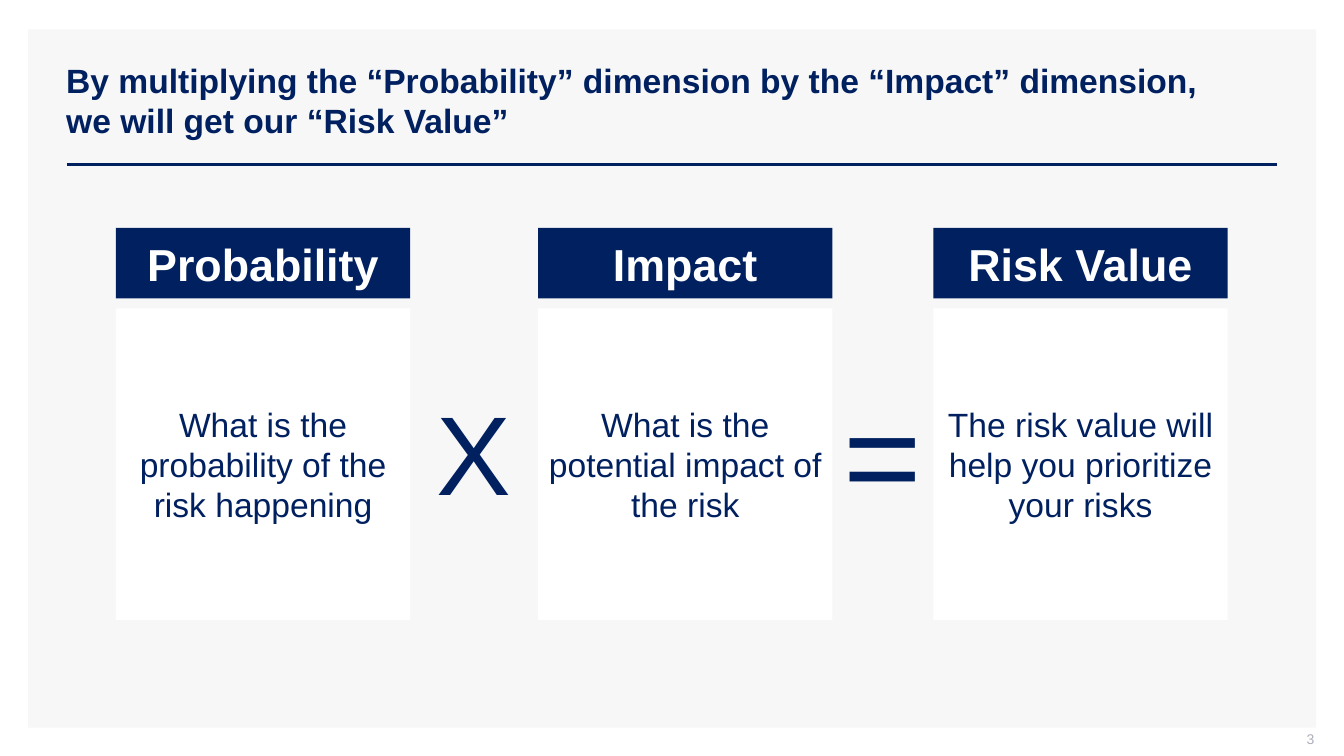
from dataclasses import dataclass

import pptx
import pptx.dml.color
import pptx.enum.shapes
import pptx.enum.text
import pptx.oxml.ns
import pptx.util
from lxml import etree
from pptx.shapes.autoshape import Shape
from pptx.shapes.connector import Connector
from pptx.slide import Slide

Cm = pptx.util.Cm
Align = pptx.enum.text.PP_ALIGN
Anchor = pptx.enum.text.MSO_ANCHOR

NAVY = "002060"
WHITE = "FFFFFF"
PANEL_GREY = "F7F7F7"
NUMBER_GREY = "ADAFBB"

FACTOR_WIDTH = 7.42
HEADER_TOP, HEADER_HEIGHT = 5.74, 1.78
BODY_TOP, BODY_HEIGHT = 7.77, 7.85
OPERATOR_WIDTH, OPERATOR_MIDDLE = 6.83, 11.38


@dataclass(frozen=True)
class Box:
    left: float
    top: float
    width: float
    height: float

    def lengths(self) -> tuple[pptx.util.Length, ...]:
        return Cm(self.left), Cm(self.top), Cm(self.width), Cm(self.height)


@dataclass(frozen=True)
class TextStyle:
    size: int
    color: str = NAVY
    bold: bool = False
    align: Align = Align.CENTER
    anchor: Anchor = Anchor.MIDDLE


@dataclass(frozen=True)
class Factor:
    left: float
    heading: str
    explanation: str


@dataclass(frozen=True)
class Operator:
    symbol: str
    size: int
    height: float


FACTORS = [
    Factor(2.92, "Probability", "What is the probability of the risk happening"),
    Factor(13.56, "Impact", "What is the potential impact of the risk"),
    Factor(23.52, "Risk Value", "The risk value will help you prioritize your risks"),
]
OPERATORS = [Operator("X", 80, 3.68), Operator("=", 96, 4.37)]

TITLE_STYLE = TextStyle(24, bold=True, align=Align.LEFT)
HEADING_STYLE = TextStyle(32, WHITE, bold=True)
EXPLANATION_STYLE = TextStyle(24)
NUMBER_STYLE = TextStyle(10, NUMBER_GREY, align=Align.RIGHT)


def rgb(value: str) -> pptx.dml.color.RGBColor:
    return pptx.dml.color.RGBColor.from_string(value)


def write(shape: Shape, text: str, style: TextStyle) -> None:
    frame = shape.text_frame
    frame.text = text
    frame.word_wrap = True
    frame.vertical_anchor = style.anchor
    for paragraph in frame.paragraphs:
        paragraph.alignment = style.align
        for run in paragraph.runs:
            run.font.name = "Arial"
            run.font.size = pptx.util.Pt(style.size)
            run.font.bold = style.bold
            run.font.color.rgb = rgb(style.color)


def add_rectangle(slide: Slide, box: Box, fill: str) -> Shape:
    rectangle = slide.shapes.add_shape(
        pptx.enum.shapes.MSO_SHAPE.RECTANGLE, *box.lengths()
    )
    rectangle.shadow.inherit = False
    rectangle.fill.solid()
    rectangle.fill.fore_color.rgb = rgb(fill)
    rectangle.line.fill.background()
    return rectangle


def add_text(slide: Slide, box: Box, text: str, style: TextStyle) -> Shape:
    textbox = slide.shapes.add_textbox(*box.lengths())
    write(textbox, text, style)
    return textbox


def add_rule(slide: Slide, left: float, right: float, y: float) -> Connector:
    rule = slide.shapes.add_connector(
        pptx.enum.shapes.MSO_CONNECTOR.STRAIGHT, Cm(left), Cm(y), Cm(right), Cm(y)
    )
    rule.line.color.rgb = rgb(NAVY)
    rule.line.width = pptx.util.Pt(2)
    properties = rule._element.find(pptx.oxml.ns.qn("p:spPr"))
    etree.SubElement(properties, pptx.oxml.ns.qn("a:effectLst"))
    return rule


def add_factor(slide: Slide, factor: Factor) -> None:
    header = Box(factor.left, HEADER_TOP, FACTOR_WIDTH, HEADER_HEIGHT)
    body = Box(factor.left, BODY_TOP, FACTOR_WIDTH, BODY_HEIGHT)
    write(add_rectangle(slide, header, NAVY), factor.heading, HEADING_STYLE)
    write(add_rectangle(slide, body, WHITE), factor.explanation, EXPLANATION_STYLE)


def add_operator(slide: Slide, operator: Operator, before: Factor, after: Factor) -> None:
    center = (before.left + FACTOR_WIDTH + after.left) / 2
    box = Box(
        center - OPERATOR_WIDTH / 2,
        OPERATOR_MIDDLE - operator.height / 2,
        OPERATOR_WIDTH,
        operator.height,
    )
    style = TextStyle(operator.size, anchor=Anchor.TOP)
    add_text(slide, box, operator.symbol, style)


def add_slide_number(slide: Slide) -> None:
    number = add_text(slide, Box(25.5, 18.42, 7.62, 0.53), "3", NUMBER_STYLE)
    frame = number.text_frame
    frame.margin_left = Cm(0.25)
    frame.margin_top = frame.margin_right = Cm(0)
    frame.margin_bottom = Cm(0.13)


def main() -> None:
    presentation = pptx.Presentation()
    presentation.slide_width = Cm(33.87)
    presentation.slide_height = Cm(19.05)
    slide = presentation.slides.add_slide(presentation.slide_layouts[6])

    add_rectangle(slide, Box(0.71, 0.74, 32.46, 17.6), PANEL_GREY)
    add_rule(slide, 1.68, 32.18, 4.14)
    add_text(
        slide,
        Box(1.42, 1.02, 29.01, 3.02),
        "By multiplying the “Probability” dimension by the “Impact” dimension, "
        "we will get our “Risk Value”",
        TITLE_STYLE,
    )
    add_slide_number(slide)
    for factor in FACTORS:
        add_factor(slide, factor)
    for operator, before, after in zip(OPERATORS, FACTORS, FACTORS[1:]):
        add_operator(slide, operator, before, after)

    presentation.save("out.pptx")


if __name__ == "__main__":
    main()
